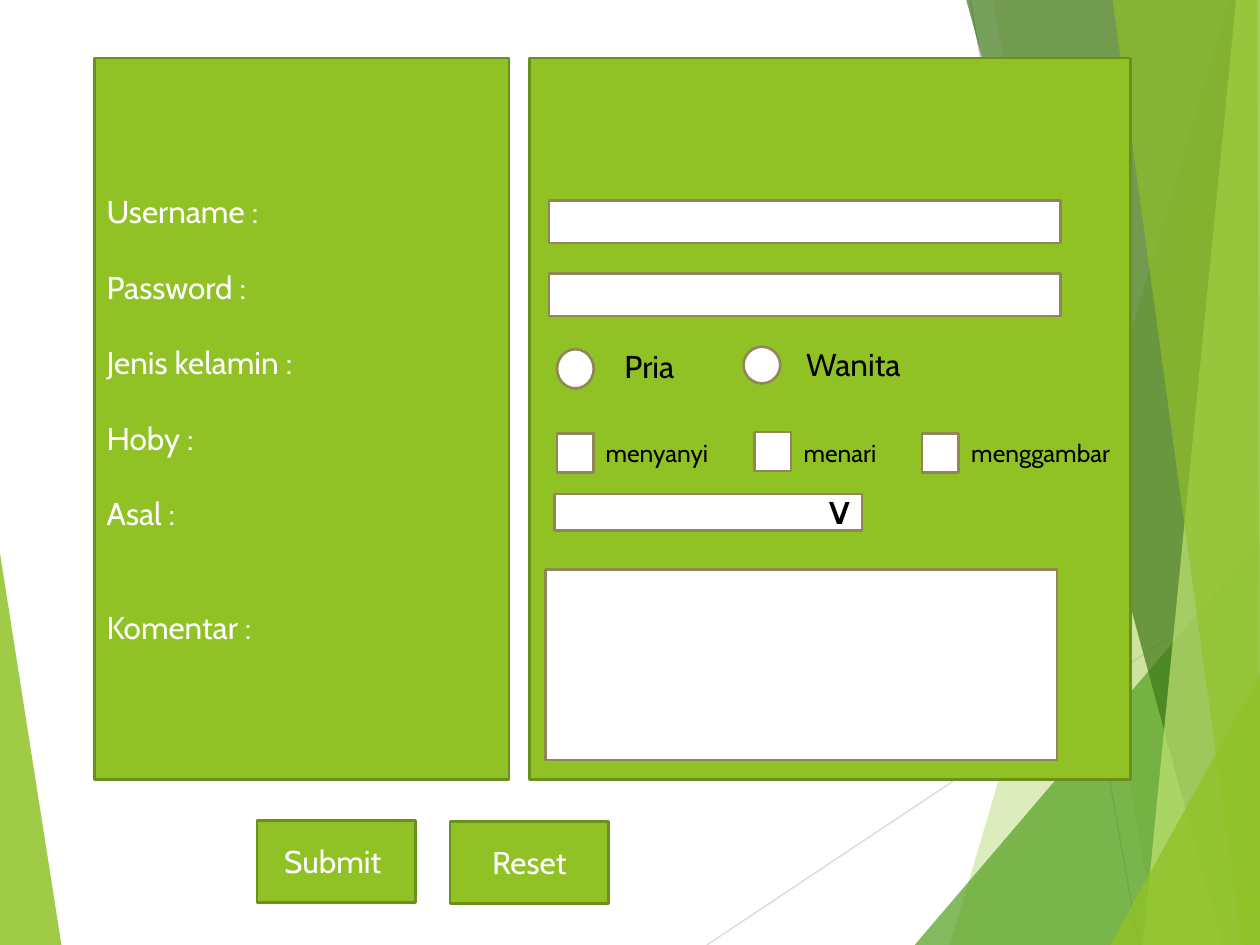
from lxml import etree
from pptx import Presentation
from pptx.dml.color import RGBColor
from pptx.enum.shapes import MSO_CONNECTOR, MSO_SHAPE
from pptx.enum.text import MSO_ANCHOR, PP_ALIGN
from pptx.oxml.ns import qn
from pptx.util import Cm, Pt

RECT, OVAL = MSO_SHAPE.RECTANGLE, MSO_SHAPE.OVAL
STRAIGHT = MSO_CONNECTOR.STRAIGHT
LEFT, RIGHT = PP_ALIGN.LEFT, PP_ALIGN.RIGHT
CENTER, JUSTIFY = PP_ALIGN.CENTER, PP_ALIGN.JUSTIFY
MIDDLE = MSO_ANCHOR.MIDDLE
GREEN, DARK_GREEN = "90C226", "6B901C"
WHITE, BLACK, OLIVE = "FFFFFF", "000000", "918655"
LINE_PITCH = 21.6
W, H = 25.4, 19.05

prs = Presentation()
prs.slide_width, prs.slide_height = Cm(W), Cm(H)
slide = prs.slides.add_slide(prs.slide_layouts[6])
shapes = slide.shapes


def add_box(kind, left, top, width, height, fill, outline):
    box = shapes.add_shape(kind, Cm(left), Cm(top), Cm(width), Cm(height))
    box.shadow.inherit = False
    box.fill.solid()
    box.fill.fore_color.rgb = RGBColor.from_string(fill)
    box.line.color.rgb = RGBColor.from_string(outline)
    box.line.width = Pt(1.5)
    return box


def write(holder, *lines, size=18, color=BLACK, bold=False, align=LEFT, gaps=(0,)):
    """Write one paragraph per line; gaps are the points of space before each."""
    frame = holder.text_frame
    frame.word_wrap = True
    for i, (line, gap) in enumerate(zip(lines, gaps)):
        paragraph = frame.add_paragraph() if i else frame.paragraphs[0]
        paragraph.alignment = align
        paragraph.space_before = Pt(gap)
        run = paragraph.add_run()
        run.text = line
        run.font.name, run.font.size, run.font.bold = "Cabin", Pt(size), bold
        run.font.color.rgb = RGBColor.from_string(color)


# Background: thin lines, then translucent facets, with one facet behind the lines
corner_top, corner_bottom = (W, 0), (W, H)
facets = [
    (GREEN, 85, [(0, 11.15), (1.24, H), (0, H)]),
    (GREEN, 30, [(24.77, 0), (19.15, H), corner_bottom, corner_top]),
    (GREEN, 20, [(20.02, 0), (23.34, H), corner_bottom, corner_top]),
    ("54A021", 72, [(18.44, H), (W, 10.9), corner_bottom]),
    ("3F7819", 70, [(19.48, 0), (24.64, H), corner_bottom, corner_top]),
    ("C0E474", 70, [(24.92, 0), (23.04, H), corner_bottom, corner_top]),
    (GREEN, 65, [(22.43, 0), (25.04, H), corner_bottom, (25.35, 0)]),
    (GREEN, 80, [(22.38, H), (W, 13.59), corner_bottom]),
]
for x1, y1, x2, y2, color in [
    (14.25, H, W, 11.63, "D9D9D9"),
    (19.56, 0, 22.96, H, "BFBFBF"),
]:
    ray = shapes.add_connector(STRAIGHT, Cm(x1), Cm(y1), Cm(x2), Cm(y2))
    ray.line.color.rgb = RGBColor.from_string(color)
    ray.line.width = Pt(0.75)
    etree.SubElement(ray._element.spPr, qn("a:effectLst"))

for color, opacity, corners in facets:
    start, *others = [(Cm(x), Cm(y)) for x, y in corners]
    builder = shapes.build_freeform(*start)
    builder.add_line_segments(others)
    facet = builder.convert_to_shape()
    facet.shadow.inherit = False
    facet.line.fill.background()
    facet.fill.solid()
    facet.fill.fore_color.rgb = RGBColor.from_string(color)
    tint = facet._element.spPr.find(qn("a:solidFill"))[0]
    etree.SubElement(tint, qn("a:alpha"), val=str(opacity * 1000))

# Panels
label_panel = add_box(RECT, 1.9, 1.17, 8.36, 14.55, GREEN, DARK_GREEN)
label_panel.text_frame.vertical_anchor = MIDDLE
write(label_panel, "Username :", "Password :", "Jenis kelamin :", "Hoby : ", "Asal :",
      "Komentar :", color=WHITE, align=JUSTIFY,
      gaps=[0] + [LINE_PITCH] * 4 + [2 * LINE_PITCH])
add_box(RECT, 10.67, 1.17, 12.12, 14.55, GREEN, DARK_GREEN)

# Username, password and comment fields
for left, top, height in [(11.07, 4.04, 0.86), (11.07, 5.51, 0.86), (11, 11.48, 3.84)]:
    add_box(RECT, left, top, 10.31, height, WHITE, OLIVE)

# Radio buttons and check boxes: mark position and height, caption position and width
options = [
    (OVAL, 11.23, 7.04, 0.79, "Pria", 12.34, 6.88, 1.68, 18),
    (OVAL, 14.99, 6.99, 0.74, "Wanita", 16, 6.83, 2.67, 18),
    (RECT, 11.23, 8.74, 0.79, "menyanyi", 11.96, 8.71, 3.02, 14),
    (RECT, 15.21, 8.71, 0.79, "menari", 15.95, 8.71, 2.06, 14),
    (RECT, 18.59, 8.74, 0.79, "menggambar", 19.33, 8.71, 3.45, 14),
]
for kind, left, top, height, name, name_left, name_top, name_width, size in options:
    add_box(kind, left, top, 0.74, height, WHITE, OLIVE)
    caption = shapes.add_textbox(Cm(name_left), Cm(name_top), Cm(name_width),
                                 Cm(1.02 if size == 18 else 0.86))
    write(caption, name, size=size)

# Drop-down list
origin_list = add_box(RECT, 11.18, 9.96, 6.2, 0.74, WHITE, OLIVE)
origin_list.text_frame.vertical_anchor = MIDDLE
write(origin_list, "V", bold=True, align=RIGHT)

# Buttons
for name, left, top in [("Submit ", 5.18, 16.54), ("Reset", 9.07, 16.56)]:
    button = add_box(RECT, left, top, 3.2, 1.65, GREEN, DARK_GREEN)
    button.text_frame.vertical_anchor = MIDDLE
    write(button, name, color=WHITE, align=CENTER)

prs.save("out.pptx")
